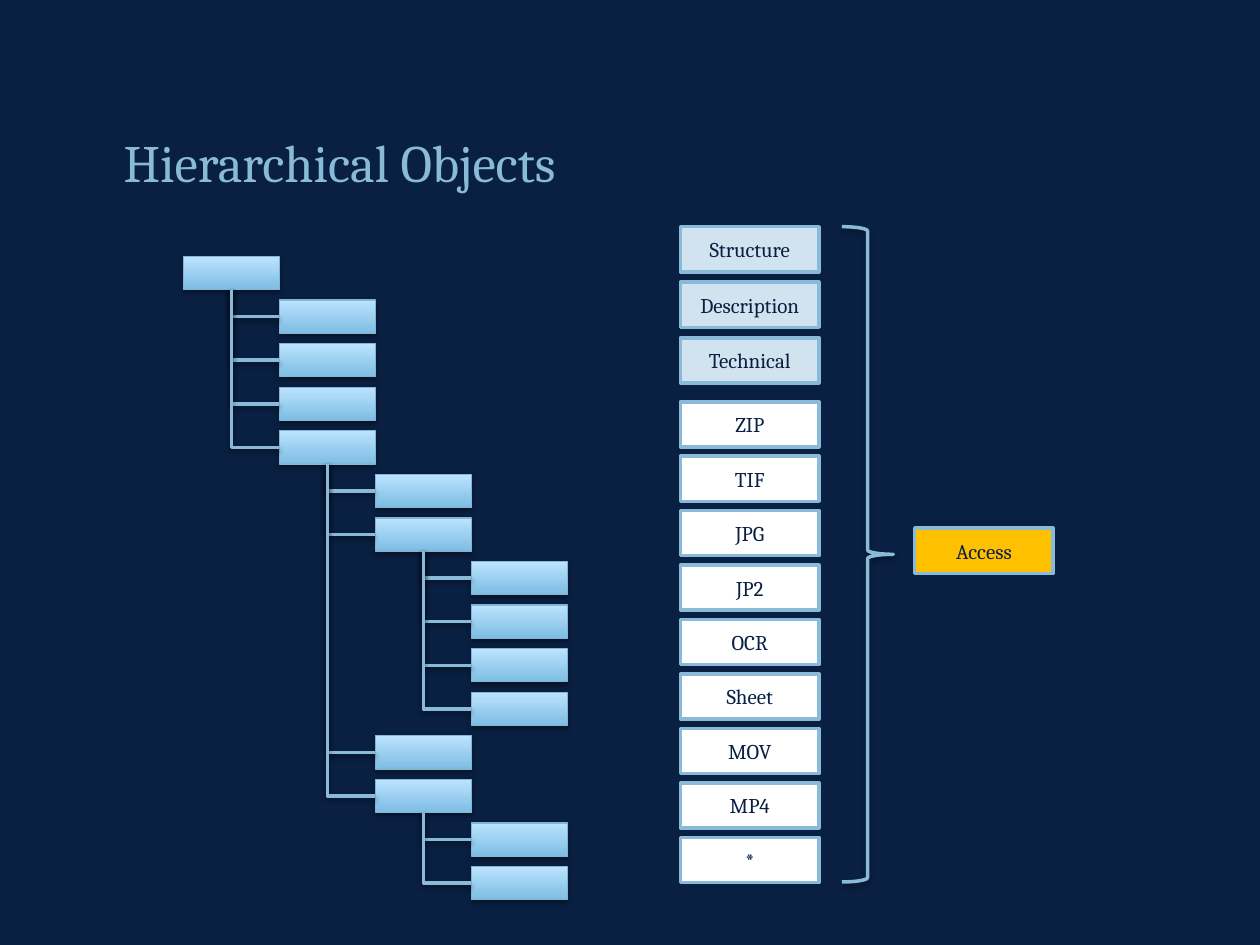
from dataclasses import dataclass

from lxml.etree import SubElement
from pptx import Presentation
from pptx.dml.color import RGBColor
from pptx.enum.shapes import MSO_CONNECTOR, MSO_SHAPE
from pptx.enum.text import MSO_ANCHOR, PP_ALIGN
from pptx.oxml.ns import qn
from pptx.util import Cm, Pt


@dataclass(frozen=True)
class Theme:
    font: str = "Cambria"
    title_size: int = 30
    label_size: int = 12
    line_width: float = 2
    node_line_width: float = 0.75
    navy: str = "0A2043"
    sky: str = "89BAD7"
    node_dark: str = "7DBDE3"
    node_light: str = "BCE3FF"
    node_line: str = "84B6D4"
    metadata: str = "D0E3EF"
    file: str = "FFFFFF"
    access: str = "FFC000"


THEME = Theme()

# Depth of each node, from top to bottom
TREE_DEPTHS = [0, 1, 1, 1, 1, 2, 2, 3, 3, 3, 3, 2, 2, 3, 3]
METADATA = ["Structure", "Description", "Technical"]
FILES = ["ZIP", "TIF", "JPG", "JP2", "OCR", "Sheet", "MOV", "MP4", "*"]
CARD_W, CARD_H = 2.79, 0.91


def rgb(color):
    return RGBColor.from_string(color)


def set_line(shape, color, width):
    shape.line.color.rgb = rgb(color)
    shape.line.width = Pt(width)


def set_shadow(shape, dist, opacity):
    """Give the shape a soft shadow straight below; call after fill and line."""
    spPr = shape._element.spPr
    for old in spPr.findall(qn("a:effectLst")):
        spPr.remove(old)
    effects = SubElement(spPr, qn("a:effectLst"))
    shadow = SubElement(effects, qn("a:outerShdw"), blurRad=str(Pt(3.1)),
                        dist=str(Pt(dist)), dir="5400000", rotWithShape="0")
    black = SubElement(shadow, qn("a:srgbClr"), val="000000")
    SubElement(black, qn("a:alpha"), val=str(opacity * 1000))


def format_text(tf, text, size, color, align, anchor):
    tf.text = text
    tf.vertical_anchor = anchor
    p = tf.paragraphs[0]
    p.alignment = align
    font = p.runs[0].font
    font.name, font.size = THEME.font, Pt(size)
    font.color.rgb = rgb(color)


def add_title(slide, x, y, w, h):
    title = slide.shapes.title
    title.left, title.top, title.width, title.height = Cm(x), Cm(y), Cm(w), Cm(h)
    tf = title.text_frame
    format_text(tf, "Hierarchical Objects", THEME.title_size, THEME.sky,
                PP_ALIGN.LEFT, MSO_ANCHOR.TOP)
    tf.paragraphs[0].line_spacing = 1.2


def add_node(slide, x, y, w, h):
    node = slide.shapes.add_shape(MSO_SHAPE.RECTANGLE, Cm(x), Cm(y), Cm(w), Cm(h))
    node.fill.gradient()
    node.fill.gradient_angle = 90
    for stop, color in zip(node.fill.gradient_stops, (THEME.node_dark, THEME.node_light)):
        stop.color.rgb = rgb(color)
    set_line(node, THEME.node_line, THEME.node_line_width)
    set_shadow(node, 1.8, 35)
    return node


def add_branch(slide, parent, child):
    """Run an elbow from the child's left side to the parent's bottom."""
    branch = slide.shapes.add_connector(
        MSO_CONNECTOR.ELBOW, child.left, child.top + child.height // 2,
        parent.left + parent.width // 2, parent.top + parent.height)
    branch.begin_connect(child, 1)
    branch.end_connect(parent, 2)
    branch._element.spPr.find(qn("a:prstGeom")).set("prst", "bentConnector2")
    set_line(branch, THEME.sky, THEME.line_width)
    set_shadow(branch, 1.6, 38)


def add_tree(slide, x, y, w, h):
    node_w = w / (max(TREE_DEPTHS) + 1)
    node_h = 0.67
    pitch = (h - node_h) / (len(TREE_DEPTHS) - 1)
    latest, links = {}, []
    for row, depth in enumerate(TREE_DEPTHS):
        node = add_node(slide, x + depth * node_w, y + row * pitch, node_w, node_h)
        latest[depth] = node
        if depth:
            links.append((latest[depth - 1], node))
    for parent, child in links:
        add_branch(slide, parent, child)


def add_card(slide, text, x, y, color):
    card = slide.shapes.add_shape(MSO_SHAPE.RECTANGLE, Cm(x), Cm(y), Cm(CARD_W), Cm(CARD_H))
    card.shadow.inherit = False
    card.fill.solid()
    card.fill.fore_color.rgb = rgb(color)
    set_line(card, THEME.sky, THEME.line_width)
    format_text(card.text_frame, text, THEME.label_size, THEME.navy,
                PP_ALIGN.CENTER, MSO_ANCHOR.MIDDLE)


def add_stack(slide, labels, x, y, h, color):
    pitch = (h - CARD_H) / (len(labels) - 1)
    for i, label in enumerate(labels):
        add_card(slide, label, x, y + i * pitch, color)


def add_access(slide, x, y, w, h):
    # Brace that gathers the stacks
    brace = slide.shapes.add_shape(MSO_SHAPE.RIGHT_BRACE, Cm(x), Cm(y), Cm(1.04), Cm(h))
    brace.fill.background()
    set_line(brace, THEME.sky, THEME.line_width)
    set_shadow(brace, 1.6, 38)
    # Card at the brace's tip
    add_card(slide, "Access", x + w - CARD_W, y + (h - CARD_H) / 2 - 0.07, THEME.access)


def main():
    prs = Presentation()
    prs.slide_width, prs.slide_height = Cm(25.4), Cm(19.05)
    slide = prs.slides.add_slide(prs.slide_layouts[5])
    slide.background.fill.solid()
    slide.background.fill.fore_color.rgb = rgb(THEME.navy)

    add_title(slide, 2.24, 2.24, 20.96, 1.8)
    add_tree(slide, 3.7, 5.17, 7.74, 12.97)
    add_stack(slide, METADATA, 13.72, 4.57, 3.15, THEME.metadata)
    add_stack(slide, FILES, 13.72, 8.1, 9.69, THEME.file)
    add_access(slide, 16.97, 4.57, 4.26, 13.21)
    prs.save("out.pptx")


if __name__ == "__main__":
    main()
